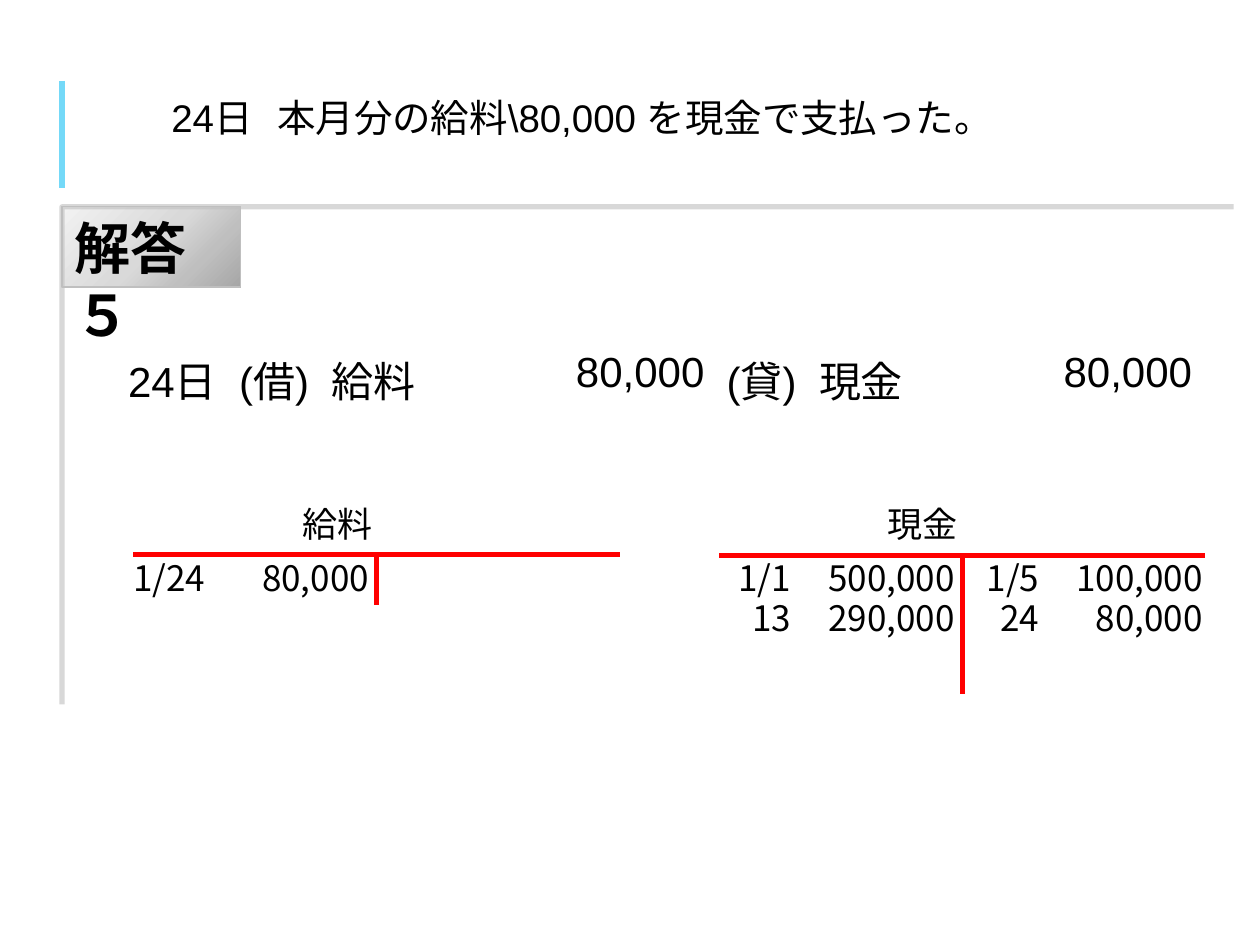
"""Build the bookkeeping slide: salary paid in cash, its journal entry and two T accounts."""
from copy import deepcopy

from lxml import etree
from pptx import Presentation, util as u
from pptx.dml.color import RGBColor
from pptx.enum import lang, shapes, text
from pptx.oxml.ns import qn

COLORS = {"ink": "000000", "rule": "FF0000", "accent": "74D9F8", "frame": "BFBFBF"}
BADGE_STOPS = [(0, "F2F2F2"), (0.51, "D9D9D9"), (0.75, "BFBFBF"), (1, "A6A6A6")]
LEFT, CENTER, RIGHT, JUSTIFY = (
    text.PP_ALIGN.LEFT, text.PP_ALIGN.CENTER, text.PP_ALIGN.RIGHT, text.PP_ALIGN.JUSTIFY)


def write(frame, words, size, font, align, bold=False):
    para = frame.paragraphs[0]
    para.alignment = align
    span = para.add_run()
    span.text = words
    span.font.size = u.Pt(size)
    span.font.name = font
    span.font.bold = bold
    span.font.language_id = lang.MSO_LANGUAGE_ID.JAPANESE
    span.font.color.rgb = RGBColor.from_string(COLORS["ink"])


def draw_line(start, end, color):
    line = page.shapes.add_connector(
        shapes.MSO_CONNECTOR.STRAIGHT, *(u.Cm(value) for value in start + end))
    line.line.color.rgb = RGBColor.from_string(COLORS[color])
    line.line.width = u.Pt(3)
    etree.SubElement(line._element.spPr, qn("a:effectLst"))


deck = Presentation()
deck.slide_width, deck.slide_height = u.Cm(25.4), u.Cm(19.05)
page = deck.slides.add_slide(deck.slide_layouts[6])

badge = page.shapes.add_shape(
    shapes.MSO_SHAPE.RECTANGLE, u.Cm(1.25), u.Cm(4.17), u.Cm(3.6), u.Cm(1.62))
badge.shadow.inherit = False
badge.fill.gradient()
badge.fill.gradient_angle = 315
stop_list = badge._element.spPr.find(qn("a:gradFill")).find(qn("a:gsLst"))
for _ in BADGE_STOPS[2:]:
    stop_list.append(deepcopy(stop_list[0]))
for stop, (position, color) in zip(badge.fill.gradient_stops, BADGE_STOPS):
    stop.position = position
    stop.color.rgb = RGBColor.from_string(color)
badge.line.color.rgb = RGBColor.from_string(COLORS["frame"])
badge.line.width = u.Pt(0.75)
badge.text_frame.word_wrap = True
badge.text_frame.vertical_anchor = text.MSO_ANCHOR.TOP
write(badge.text_frame, "解答５", 32, "Calibri", LEFT, bold=True)

builder = page.shapes.build_freeform(u.Cm(1.25), u.Cm(14.2))
builder.add_line_segments(
    [(u.Cm(1.25), u.Cm(4.17)), (u.Cm(24.87), u.Cm(4.17))], close=False)
corner = builder.convert_to_shape()
corner.shadow.inherit = False
corner.fill.background()
corner.line.color.rgb = RGBColor.from_string(COLORS["frame"])
corner.line.width = u.Pt(3)
corner_color = corner.line._ln.find(qn("a:solidFill"))[0]
etree.SubElement(corner_color, qn("a:alpha"), val="60000")

tables = [
    (1.25, 1.65, 22, (0.25, 0.13), [
        (4.09, "24日", RIGHT), (17.91, "本月分の給料\\80,000 を現金で支払った。", LEFT)]),
    (1.88, 7.04, 24, (0, 0), [
        (2.49, "24日", RIGHT),
        (2.31, "(借)", CENTER), (3.81, "給料", JUSTIFY), (3.71, "80,000", RIGHT),
        (2.31, "(貸)", CENTER), (3.81, "現金", JUSTIFY), (3.71, "80,000", RIGHT)]),
]
for left, top, size, (side, edge), columns in tables:
    width = sum(column[0] for column in columns)
    table = page.shapes.add_table(
        1, len(columns), u.Cm(left), u.Cm(top), u.Cm(width), u.Cm(1.04)).table
    table.first_row = table.horz_banding = False
    for index, (column_width, words, align) in enumerate(columns):
        table.columns[index].width = u.Cm(column_width)
        cell = table.cell(0, index)
        cell.fill.background()
        cell.margin_left = cell.margin_right = u.Cm(side)
        cell.margin_top = cell.margin_bottom = u.Cm(edge)
        write(cell.text_frame, words, size, "Arial", align)

draw_line((1.25, 1.63), (1.25, 3.78), "accent")

accounts = [
    ("給料", 2.69, 11.18, 1.02, [["1/24", "80,000"]]),
    ("現金", 14.5, 11.2, 2.79, [
        ["1/1", "500,000", "1/5", "100,000"], ["13", "290,000", "24", "80,000"]]),
]
entry_columns = [(-0.3, 2), (1.6, 3.4), (4.7, 2), (6.6, 3.4)]
for name, left, top, stem, rows in accounts:
    draw_line((left, top), (left + 9.8, top), "rule")
    draw_line((left + 4.9, top), (left + 4.9, top + stem), "rule")
    labels = [(name, 3.15, 10.01, 3.6, JUSTIFY)]
    for row, entries in enumerate(rows):
        for words, (offset, width) in zip(entries, entry_columns):
            labels.append((words, offset, 11.1 + 0.81 * row, width, RIGHT))
    for words, offset, label_top, width, align in labels:
        box = page.shapes.add_textbox(
            u.Cm(left + offset), u.Cm(label_top), u.Cm(width), u.Cm(1.12))
        box.text_frame.word_wrap = True
        write(box.text_frame, words, 20, "Noto Sans CJK JP", align)

deck.save("out.pptx")
